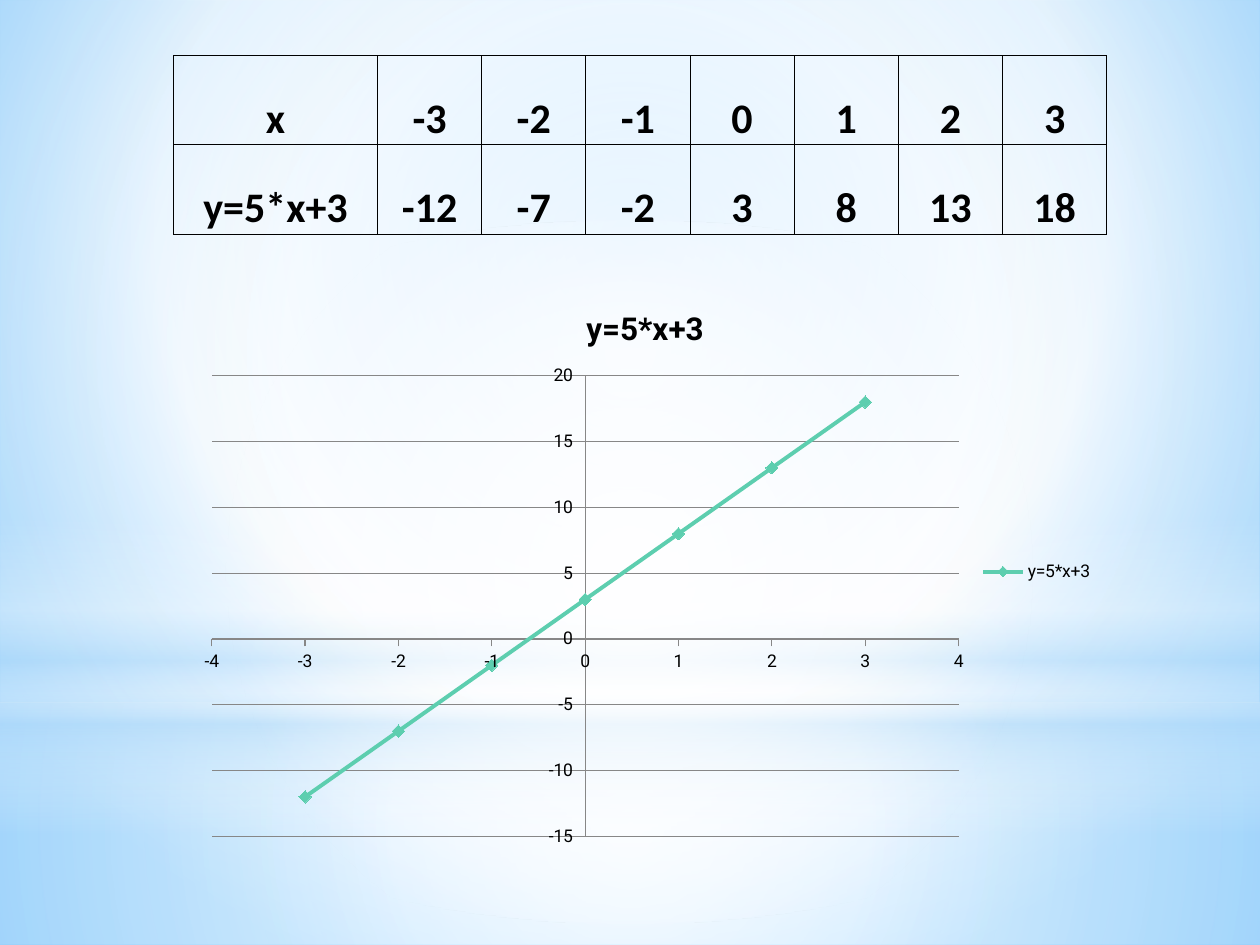
from dataclasses import dataclass

from lxml import etree
from pptx import Presentation
from pptx.chart.data import XyChartData
from pptx.dml.color import RGBColor
from pptx.enum.chart import XL_CHART_TYPE, XL_LEGEND_POSITION, XL_MARKER_STYLE, XL_TICK_MARK
from pptx.enum.shapes import MSO_SHAPE
from pptx.enum.text import MSO_ANCHOR, PP_ALIGN
from pptx.oxml.ns import qn
from pptx.util import Cm, Pt

RECTANGLE = MSO_SHAPE.RECTANGLE
OVAL = MSO_SHAPE.OVAL
SMOOTH_SCATTER = XL_CHART_TYPE.XY_SCATTER_SMOOTH
RIGHT = XL_LEGEND_POSITION.RIGHT
DIAMOND = XL_MARKER_STYLE.DIAMOND
OUTSIDE = XL_TICK_MARK.OUTSIDE
BOTTOM = MSO_ANCHOR.BOTTOM
CENTER = PP_ALIGN.CENTER


@dataclass(frozen=True)
class Theme:
    ink: str = "000000"
    white: str = "FFFFFF"
    mist: str = "B4DCFA"
    sky: str = "9ED5FF"
    deep_sky: str = "5BB9FF"
    axis: str = "878787"
    graph: str = "5DCEAF"
    table_font: str = "Calibri"
    chart_font: str = "Roboto"
    table_size: int = 24
    title_size: int = 18
    label_size: int = 10


@dataclass(frozen=True)
class Stop:
    position: int
    color: str
    opacity: int = 100


@dataclass(frozen=True)
class Gradient:
    stops: tuple[Stop, ...]
    focus: tuple[int, int, int, int] | None = (50, 50, 50, 50)
    angle: int = 0


@dataclass(frozen=True)
class Glow:
    outline: MSO_SHAPE
    top: float
    height: float
    gradient: Gradient


THEME = Theme()
SLIDE_WIDTH, SLIDE_HEIGHT = 25.4, 19.05
FORMULA = "y=5*x+3"
X_VALUES = range(-3, 4)
Y_VALUES = [5 * x + 3 for x in X_VALUES]

BACKDROP = Gradient(
    (Stop(0, THEME.sky), Stop(60, THEME.white), Stop(100, THEME.deep_sky)),
    focus=(20, 10, 20, 60),
)
GLOWS = (
    Glow(RECTANGLE, 14.17, 4.88, Gradient(
        (Stop(0, THEME.white, 91), Stop(37, THEME.white, 76), Stop(100, THEME.mist, 79)))),
    Glow(RECTANGLE, 0, 14.17, Gradient(
        (Stop(0, THEME.white, 89), Stop(48, THEME.white, 62), Stop(100, THEME.mist, 79)))),
    Glow(RECTANGLE, 10.46, 6.35, Gradient(
        (Stop(0, THEME.white, 0), Stop(29, THEME.white, 30), Stop(45, THEME.mist, 40),
         Stop(55, THEME.white, 26), Stop(65, THEME.mist, 60), Stop(100, THEME.white, 0)),
        focus=None, angle=90)),
    Glow(OVAL, 4.45, 14.17, Gradient(
        (Stop(0, THEME.white), Stop(56, THEME.white, 0)))),
)


def add_node(parent, tag: str, **attributes):
    return etree.SubElement(
        parent, qn(tag), {name: str(value) for name, value in attributes.items()})


def apply_gradient(fill, owner, gradient: Gradient) -> None:
    fill.background()
    empty_fill = owner.find(".//" + qn("a:noFill"))
    grad_fill = etree.Element(qn("a:gradFill"), rotWithShape="1")
    stop_list = add_node(grad_fill, "a:gsLst")
    for stop in gradient.stops:
        mark = add_node(stop_list, "a:gs", pos=stop.position * 1000)
        color = add_node(mark, "a:srgbClr", val=stop.color)
        if stop.opacity < 100:
            add_node(color, "a:alpha", val=stop.opacity * 1000)
    if gradient.focus:
        circle = add_node(grad_fill, "a:path", path="circle")
        sides = zip("ltrb", gradient.focus)
        add_node(circle, "a:fillToRect", **{side: share * 1000 for side, share in sides})
    else:
        add_node(grad_fill, "a:lin", ang=gradient.angle * 60000, scaled=0)
    empty_fill.getparent().replace(empty_fill, grad_fill)


def add_glow(slide, glow: Glow) -> None:
    shape = slide.shapes.add_shape(
        glow.outline, 0, Cm(glow.top), Cm(SLIDE_WIDTH), Cm(glow.height))
    shape.shadow.inherit = False
    shape.line.fill.background()
    apply_gradient(shape.fill, shape.element, glow.gradient)


def set_font(font, name: str, size: int, bold: bool) -> None:
    font.name = name
    font.size = Pt(size)
    font.bold = bold
    font.color.rgb = RGBColor.from_string(THEME.ink)


def format_cell(cell, text: str) -> None:
    cell.text = text
    cell.vertical_anchor = BOTTOM
    cell.margin_left = cell.margin_right = cell.margin_top = Cm(0.03)
    cell.margin_bottom = 0
    paragraph = cell.text_frame.paragraphs[0]
    paragraph.alignment = CENTER
    set_font(paragraph.font, THEME.table_font, THEME.table_size, True)
    properties = cell._tc.get_or_add_tcPr()
    for side in ("a:lnL", "a:lnR", "a:lnT", "a:lnB"):
        border = add_node(properties, side, w=Pt(0.5))
        add_node(add_node(border, "a:solidFill"), "a:srgbClr", val=THEME.ink)
    cell.fill.background()


def add_value_table(slide) -> None:
    rows = (("x", *X_VALUES), (FORMULA, *Y_VALUES))
    head_width, value_width, row_height = 4.11, 2.1, 1.8
    width = head_width + value_width * len(X_VALUES)
    table = slide.shapes.add_table(
        len(rows), len(rows[0]), Cm(3.5), Cm(1.12), Cm(width), Cm(row_height * len(rows))).table
    table.first_row = table.horz_banding = False
    for index, column in enumerate(table.columns):
        column.width = Cm(value_width if index else head_width)
    for row_index, values in enumerate(rows):
        for column_index, value in enumerate(values):
            format_cell(table.cell(row_index, column_index), str(value))


def format_line(line, color: str, width: float) -> None:
    line.color.rgb = RGBColor.from_string(color)
    line.width = Pt(width)


def format_axis(axis, low: int, high: int, step: int) -> None:
    axis.minimum_scale, axis.maximum_scale, axis.major_unit = low, high, step
    axis.major_tick_mark = OUTSIDE
    format_line(axis.format.line, THEME.axis, 0.75)


def place_plot(chart, **shares: float) -> None:
    plot_area = chart._chartSpace.chart.plotArea
    for previous in plot_area.findall(qn("c:layout")):
        plot_area.remove(previous)
    layout = etree.Element(qn("c:layout"))
    plot_area.insert(0, layout)
    manual = add_node(layout, "c:manualLayout")
    add_node(manual, "c:layoutTarget", val="inner")
    for mode in ("c:xMode", "c:yMode"):
        add_node(manual, mode, val="edge")
    for name, share in shares.items():
        add_node(manual, "c:" + name, val=share)


def add_graph(slide) -> None:
    data = XyChartData()
    points = data.add_series(FORMULA)
    for x, y in zip(X_VALUES, Y_VALUES):
        points.add_data_point(x, y)
    chart = slide.shapes.add_chart(
        SMOOTH_SCATTER, Cm(3.71), Cm(5.72), Cm(18.59), Cm(11.61), data).chart
    set_font(chart.font, THEME.chart_font, THEME.label_size, False)
    chart.has_title = True
    heading = chart.chart_title.text_frame
    heading.text = FORMULA
    set_font(heading.paragraphs[0].font, THEME.chart_font, THEME.title_size, True)
    chart.has_legend = True
    chart.legend.position = RIGHT
    chart.legend.include_in_layout = False
    format_axis(chart.category_axis, -4, 4, 1)
    format_axis(chart.value_axis, -15, 20, 5)
    chart.category_axis.has_major_gridlines = False
    chart.value_axis.has_major_gridlines = True
    format_line(chart.value_axis.major_gridlines.format.line, THEME.axis, 0.75)
    place_plot(chart, x=0.03, y=0.16, w=0.81, h=0.8)
    plot = chart.plots[0]
    plot.vary_by_categories = False
    graph = plot.series[0]
    graph.smooth = True
    format_line(graph.format.line, THEME.graph, 2.25)
    graph.marker.style = DIAMOND
    graph.marker.size = 7
    graph.marker.format.fill.solid()
    graph.marker.format.fill.fore_color.rgb = RGBColor.from_string(THEME.graph)
    format_line(graph.marker.format.line, THEME.graph, 0.75)


def main() -> None:
    presentation = Presentation()
    presentation.slide_width, presentation.slide_height = Cm(SLIDE_WIDTH), Cm(SLIDE_HEIGHT)
    slide = presentation.slides.add_slide(presentation.slide_layouts[6])
    apply_gradient(slide.background.fill, slide.element, BACKDROP)
    for glow in GLOWS:
        add_glow(slide, glow)
    add_value_table(slide)
    add_graph(slide)
    presentation.save("out.pptx")


if __name__ == "__main__":
    main()
